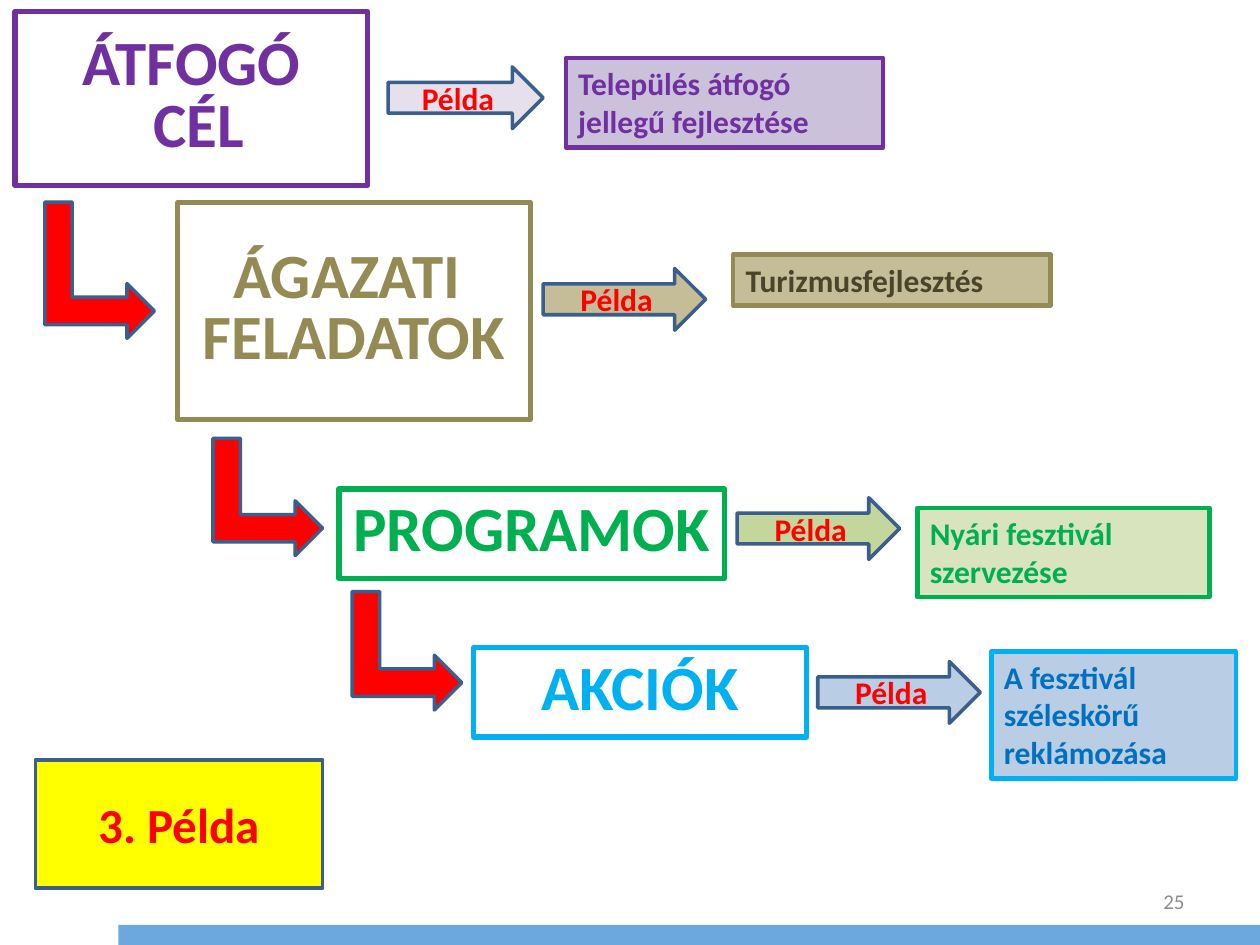
import dataclasses

import pptx
import pptx.dml.color
import pptx.enum.shapes
import pptx.enum.text
import pptx.util

Pt = pptx.util.Pt
Kind = pptx.enum.shapes.MSO_SHAPE
Align = pptx.enum.text.PP_ALIGN
Anchor = pptx.enum.text.MSO_ANCHOR
Fit = pptx.enum.text.MSO_AUTO_SIZE


@dataclasses.dataclass(frozen=True)
class Theme:
    font: str = "Calibri"
    head: int = 36
    note: int = 28
    body: int = 18
    small: int = 12
    lead: int = 35
    red: str = "FF0000"
    edge: str = "3A5F8C"
    yellow: str = "FFFF00"
    bar: str = "6CA8DE"
    gray: str = "8C8C8C"
    purple: str = "7030A0"
    olive: str = "948A54"
    green: str = "00B050"
    sky: str = "00B0F0"
    blue: str = "0070C0"
    brown: str = "4A452A"
    lilac: str = "CCC1DA"
    pale: str = "E6E0EC"
    sand: str = "C4BD97"
    mint: str = "D7E4BD"
    leaf: str = "C3D69B"
    ice: str = "B9CDE5"


def shade(code):
    return pptx.dml.color.RGBColor.from_string(code)


def write(shape, text, *, font, size, color, bold=True, align=Align.CENTER,
          anchor=Anchor.MIDDLE, lead=None, fit=Fit.NONE):
    """Fill a shape with one paragraph; a vertical tab breaks the line."""
    frame = shape.text_frame
    frame.word_wrap = True
    frame.auto_size = fit
    frame.vertical_anchor = anchor
    frame.text = text
    para = frame.paragraphs[0]
    para.alignment = align
    if lead:
        para.line_spacing = Pt(lead)
    for run in para.runs:
        run.font.name = font
        run.font.size = Pt(size)
        run.font.bold = bold
        run.font.color.rgb = shade(color)


class Deck:
    """Holds the theme and the slide being drawn."""

    def __init__(self, slide, theme):
        self.slide = slide
        self.theme = theme

    def block(self, kind, place, fill=None, line=None, width=2):
        shape = self.slide.shapes.add_shape(kind, *map(Pt, place))
        shape.shadow.inherit = False
        if fill:
            shape.fill.solid()
            shape.fill.fore_color.rgb = shade(fill)
        else:
            shape.fill.background()
        if line:
            shape.line.color.rgb = shade(line)
            shape.line.width = Pt(width)
        else:
            shape.line.fill.background()
        return shape

    def level(self, text, place, color):
        box = self.block(Kind.RECTANGLE, place, line=color, width=3)
        write(box, text, font=self.theme.font, size=self.theme.head,
              color=color, lead=self.theme.lead)

    def sample(self, text, place, fill, line, color):
        box = self.block(Kind.RECTANGLE, place, fill, line, 2.5)
        write(box, text, font=self.theme.font, size=self.theme.body,
              color=color, align=Align.LEFT, anchor=Anchor.TOP,
              fit=Fit.SHAPE_TO_FIT_TEXT)

    def arrow(self, left, top, width, fill):
        shape = self.block(Kind.RIGHT_ARROW, (left, top, width, 35.3),
                           fill, self.theme.edge)
        write(shape, "Példa", font=self.theme.font, size=self.theme.body,
              color=self.theme.red)

    def bend(self, left, top, width):
        """Draw a turned arrow that leads down to the next level."""
        shape = self.block(Kind.BENT_UP_ARROW, (left, top, width, 62.6),
                           self.theme.red, self.theme.edge)
        shape.rotation = 90

    def note(self, text, place):
        box = self.block(Kind.RECTANGLE, place, self.theme.yellow,
                         self.theme.edge)
        write(box, text, font=self.theme.font, size=self.theme.note,
              color=self.theme.red)

    def number(self, text, place):
        box = self.slide.shapes.add_textbox(*map(Pt, place))
        write(box, text, font=self.theme.font, size=self.theme.small,
              color=self.theme.gray, bold=False, align=Align.RIGHT)


def main():
    show = pptx.Presentation()
    show.slide_width, show.slide_height = Pt(720), Pt(540)
    look = Theme()
    deck = Deck(show.slides.add_slide(show.slide_layouts[6]), look)

    deck.block(Kind.RECTANGLE, (67.7, 528.5, 652.3, 11.5), look.bar)
    deck.number("25", (516.2, 500.4, 167.8, 28.8))

    levels = [
        ("ÁTFOGÓ\v CÉL", (8.6, 6.5, 201.6, 99.4), look.purple),
        ("ÁGAZATI \vFELADATOK", (101.5, 115.9, 201.6, 123.8), look.olive),
        ("PROGRAMOK", (193.7, 279.4, 220.3, 51.1), look.green),
        ("AKCIÓK", (270.7, 370.1, 190.1, 51.1), look.sky),
    ]
    for item in levels:
        deck.level(*item)

    for item in [(18, 123.1, 77.8), (119.5, 252.7, 67), (198.7, 340.6, 67.7)]:
        deck.bend(*item)

    samples = [
        ("Település átfogó jellegű fejlesztése", (323.3, 33.1, 181.4, 51.1),
         look.lilac, look.purple, look.purple),
        ("Turizmusfejlesztés", (419, 145.4, 181.4, 29.1),
         look.sand, look.olive, look.brown),
        ("Nyári fesztivál szervezése", (524.2, 290.2, 167, 51.1),
         look.mint, look.green, look.green),
        ("A fesztivál széleskörű reklámozása", (566.6, 372.2, 139.7, 72.7),
         look.ice, look.sky, look.blue),
    ]
    for item in samples:
        deck.sample(*item)

    arrows = [
        (221.8, 38.2, 88.6, look.pale),
        (310.3, 153.4, 92.9, look.sand),
        (421.2, 284.4, 92.9, look.leaf),
        (467.3, 378, 92.9, look.ice),
    ]
    for item in arrows:
        deck.arrow(*item)

    deck.note("3. Példa", (20.2, 434.2, 164.2, 73.4))
    show.save("out.pptx")


if __name__ == "__main__":
    main()
